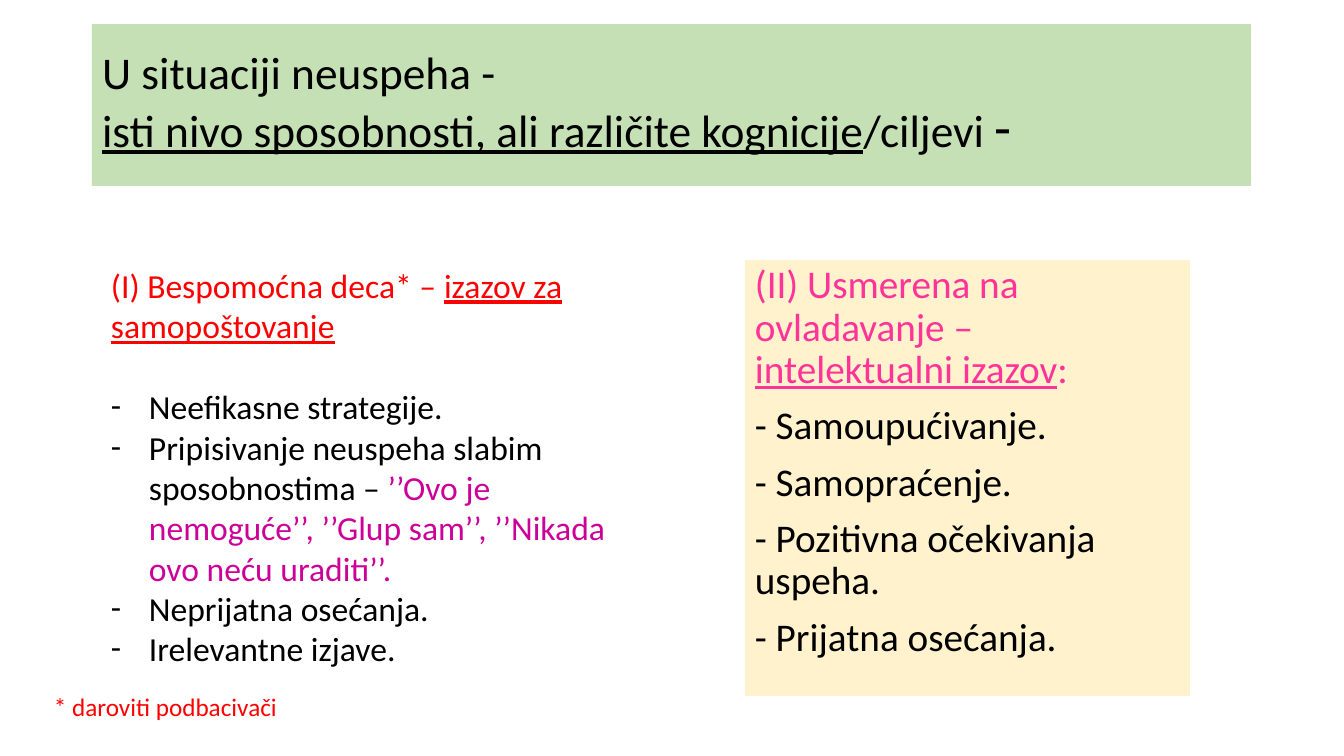
"""Build a slide comparing two ways children react to failure."""
import pptx
import pptx.dml.color
import pptx.enum.text
import pptx.oxml
import pptx.oxml.ns
import pptx.util

EMU_PER_PX = 914400 / 100.8
SLIDE_SIZE = (1344, 756)
HANGING = 38
BLACK, RED, PINK, MAGENTA = "000000", "FF0000", "FF3399", "CC0099"
ANCHOR = pptx.enum.text.MSO_ANCHOR
LEFT = pptx.enum.text.PP_ALIGN.LEFT

TITLE = {
    "box": (92, 24, 1159, 162), "fill": "C5E0B4", "size": 32.4,
    "frame": {"vertical_anchor": ANCHOR.MIDDLE, "word_wrap": True},
    "spacing": {"line_spacing": 0.9},
    "paragraphs": [
        {"runs": [("U situaciji neuspeha -", BLACK, {})]},
        {"runs": [
            ("isti nivo sposobnosti, ali različite kognicije", BLACK, {"underline": True}),
            ("/ciljevi ", BLACK, {}),
            ("-", BLACK, {"size": pptx.util.Pt(39.6)}),
        ]},
    ],
}
MASTERY = {
    "box": (745, 260, 445, 436), "fill": "FFF2CC", "size": 28,
    "frame": {"vertical_anchor": ANCHOR.TOP, "word_wrap": True},
    "spacing": {"line_spacing": 0.9, "space_after": pptx.util.Pt(10)},
    "paragraphs": [
        {"runs": [
            ("(II) Usmerena na ovladavanje – ", PINK, {}),
            ("intelektualni izazov", PINK, {"underline": True}),
            (":", PINK, {}),
        ]},
        {"runs": [("- Samoupućivanje.", BLACK, {})]},
        {"runs": [("- Samopraćenje.", BLACK, {})]},
        {"runs": [("- Pozitivna očekivanja uspeha.", BLACK, {})]},
        {"runs": [("- Prijatna osećanja.", BLACK, {})]},
    ],
}
HELPLESS = {
    "box": (101, 260, 525, 417), "size": 24,
    "frame": {"vertical_anchor": ANCHOR.TOP, "word_wrap": True},
    "spacing": {},
    "paragraphs": [
        {"spacing": {"space_after": pptx.util.Pt(29)}, "runs": [
            ("(I) Bespomoćna deca* – ", RED, {}),
            ("izazov za samopoštovanje", RED, {"underline": True}),
        ]},
        {"bullet": "-", "runs": [("Neefikasne strategije.", BLACK, {})]},
        {"bullet": "-", "runs": [
            ("Pripisivanje neuspeha slabim sposobnostima – ", BLACK, {}),
            ("’’Ovo je nemoguće’’, ’’Glup sam’’, ’’Nikada ovo neću uraditi’’.", MAGENTA, {}),
        ]},
        {"bullet": "-", "runs": [("Neprijatna osećanja.", BLACK, {})]},
        {"bullet": "-", "runs": [("Irelevantne izjave.", BLACK, {})]},
    ],
}
FOOTNOTE = {
    "box": (44, 686, 249, 40), "size": 18,
    "frame": {"vertical_anchor": ANCHOR.TOP, "word_wrap": False},
    "spacing": {},
    "paragraphs": [{"runs": [("* daroviti podbacivači", RED, {})]}],
}


def px(length):
    return pptx.util.Emu(round(length * EMU_PER_PX))


def rgb(colour):
    return pptx.dml.color.RGBColor.from_string(colour)


def assign(target, values):
    for key, value in values.items():
        setattr(target, key, value)


def add_bullet(paragraph, mark):
    properties = paragraph._p.get_or_add_pPr()
    properties.set("marL", str(px(HANGING)))
    properties.set("indent", str(-px(HANGING)))
    for tag, attribute, value in (("buFont", "typeface", "Calibri"), ("buChar", "char", mark)):
        element = pptx.oxml.parse_xml(f'<a:{tag} {pptx.oxml.ns.nsdecls("a")}/>')
        element.set(attribute, value)
        properties.append(element)


def fill_block(shape, block):
    assign(shape, dict(zip(("left", "top", "width", "height"), map(px, block["box"]))))
    if "fill" in block:
        shape.fill.solid()
        shape.fill.fore_color.rgb = rgb(block["fill"])
    frame = shape.text_frame
    assign(frame, {"auto_size": pptx.enum.text.MSO_AUTO_SIZE.NONE, **block["frame"]})
    for index, content in enumerate(block["paragraphs"]):
        paragraph = frame.add_paragraph() if index else frame.paragraphs[0]
        assign(paragraph, {"alignment": LEFT, **block["spacing"], **content.get("spacing", {})})
        if "bullet" in content:
            add_bullet(paragraph, content["bullet"])
        for words, colour, emphasis in content["runs"]:
            run = paragraph.add_run()
            run.text = words
            assign(run.font, {"name": "Calibri", "size": pptx.util.Pt(block["size"]), **emphasis})
            run.font.color.rgb = rgb(colour)


def main():
    deck = pptx.Presentation()
    deck.slide_width, deck.slide_height = map(px, SLIDE_SIZE)
    slide = deck.slides.add_slide(deck.slide_layouts[5])
    fill_block(slide.shapes.title, TITLE)
    for block in (MASTERY, HELPLESS, FOOTNOTE):
        fill_block(slide.shapes.add_textbox(*map(px, block["box"])), block)
    deck.save("out.pptx")


if __name__ == "__main__":
    main()
